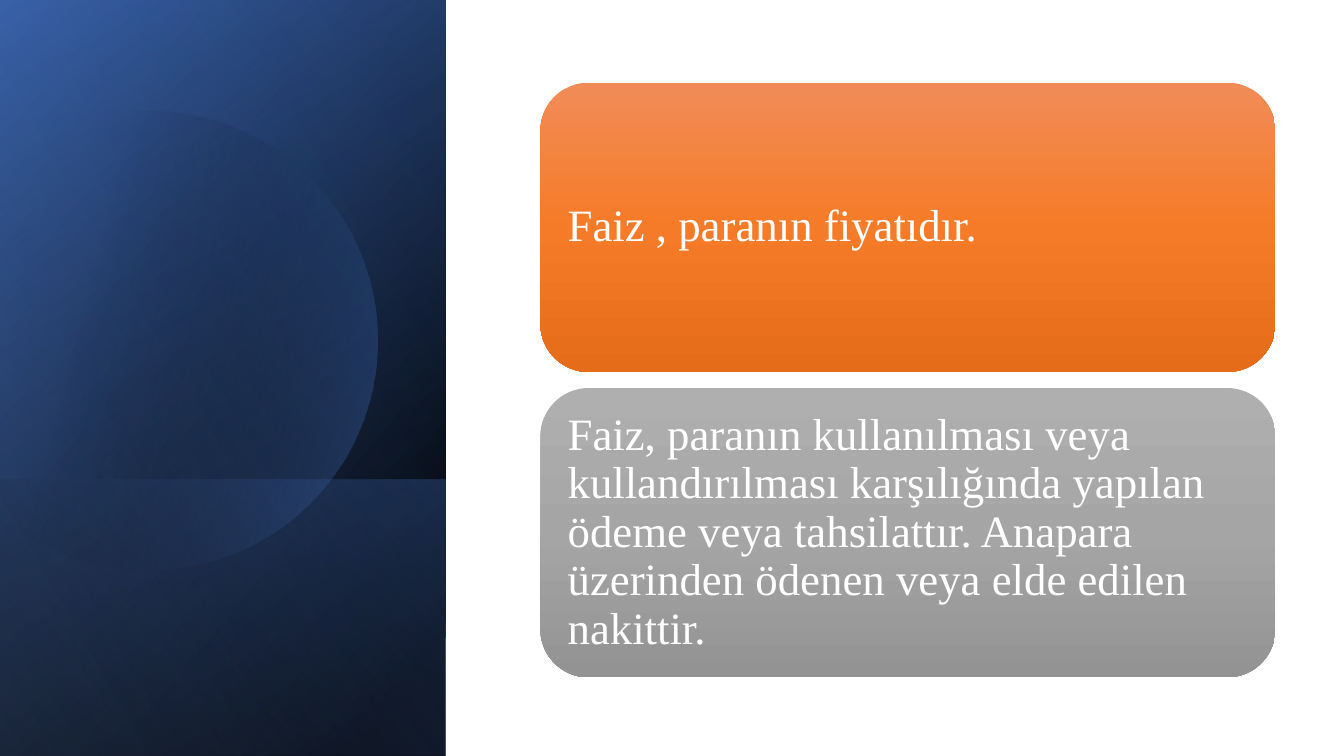
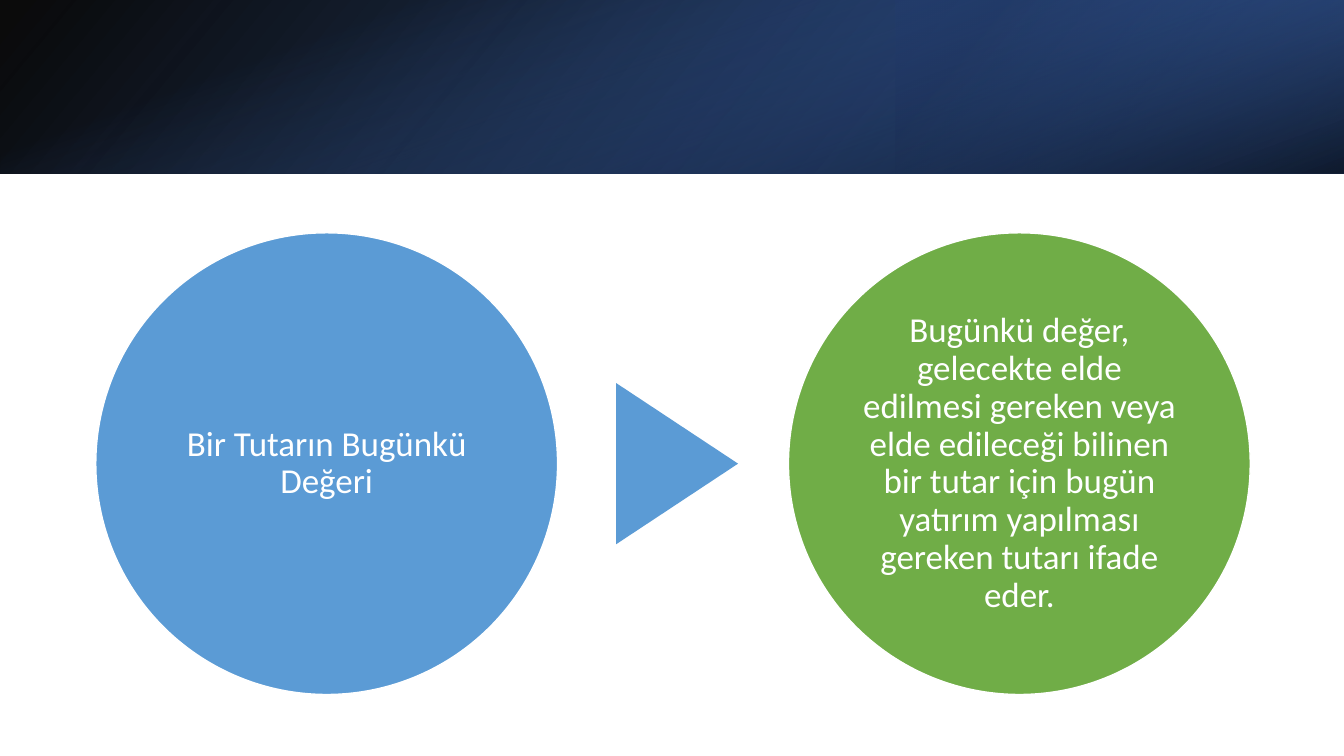
import math

import pptx
import pptx.dml.color
import pptx.enum.shapes
import pptx.enum.text
import pptx.oxml
import pptx.oxml.ns
import pptx.util

Inches = pptx.util.Inches
Shape = pptx.enum.shapes.MSO_SHAPE
Align = pptx.enum.text.PP_ALIGN

SLIDE_WIDTH, SLIDE_HEIGHT = 13.33, 7.5
COLORS = {
    "black": "000000",
    "white": "FFFFFF",
    "navy": "203864",
    "deep_blue": "2F5597",
    "blue": "4472C4",
    "pale_blue": "8FAADC",
    "sky": "5B9BD5",
    "green": "70AD47",
}
ORANGE_STOPS = [(0, "F18C57"), (50, "F67B28"), (100, "E56C19")]
GRAY_STOPS = [(0, "AFAFAF"), (50, "A5A5A5"), (100, "939393")]


def rgb(name):
    return pptx.dml.color.RGBColor.from_string(COLORS[name])


def fill_gradient(shape, stops, angle):
    """Stops are (position %, colour[, opacity %])."""
    stop_xml = ""
    for position, color, *opacity in stops:
        alpha = f'<a:alpha val="{opacity[0] * 1000}"/>' if opacity else ""
        stop_xml += (f'<a:gs pos="{position * 1000}"><a:srgbClr '
                     f'val="{COLORS.get(color, color)}">{alpha}</a:srgbClr></a:gs>')
    shape.fill.gradient()
    properties = shape.element.spPr
    properties.replace(
        properties.find(pptx.oxml.ns.qn("a:gradFill")),
        pptx.oxml.parse_xml(
            f'<a:gradFill {pptx.oxml.ns.nsdecls("a")} rotWithShape="1">'
            f'<a:gsLst>{stop_xml}</a:gsLst>'
            f'<a:lin ang="{angle * 60000}" scaled="0"/></a:gradFill>'))


def add_plain_shape(page, kind, box, rotation=0):
    """Place a shape so that it covers the box after its rotation."""
    left, top, width, height = box
    if rotation % 180 == 90:
        left, top = left + (width - height) / 2, top + (height - width) / 2
        width, height = height, width
    shape = page.shapes.add_shape(kind, *map(Inches, (left, top, width, height)))
    shape.rotation = rotation
    shape.shadow.inherit = False
    shape.line.fill.background()
    return shape


def add_glow(page, box, stops, angle, rotation=0, flipped=True):
    glow = add_plain_shape(page, Shape.RECTANGLE, box, rotation)
    if flipped:
        glow.element.spPr.xfrm.set("flipH", "1")
    fill_gradient(glow, stops, angle)


def write_text(shape, text, font, size, margin, alignment):
    frame = shape.text_frame
    frame.word_wrap = True
    frame.vertical_anchor = pptx.enum.text.MSO_ANCHOR.MIDDLE
    frame.margin_left = frame.margin_right = Inches(margin)
    frame.margin_top = frame.margin_bottom = Inches(margin)
    para = frame.paragraphs[0]
    para.text = text
    para.alignment = alignment
    para.line_spacing = 0.9
    para.font.name = font
    para.font.size = pptx.util.Pt(size)
    para.font.color.rgb = rgb("white")


def add_cut_disc(page, center_x, center_y, radius, cut_x):
    """A disc with its left side cut off along a vertical line."""
    limit = math.acos((cut_x - center_x) / radius)
    steps = 120
    angles = [limit * (2 * step / steps - 1) for step in range(steps + 1)]
    points = [(Inches(center_x + radius * math.cos(angle)),
               Inches(center_y + radius * math.sin(angle))) for angle in angles]
    builder = page.shapes.build_freeform(*points[0])
    builder.add_line_segments(points[1:], close=True)
    disc = builder.convert_to_shape()
    disc.shadow.inherit = False
    disc.line.fill.background()
    fill_gradient(disc, [(29, "black", 0), (100, "blue", 43)], 14)


def add_side_panel(page, box):
    left, top, width, height = box
    foot_height = 2.74
    foot = (left, top + height - foot_height, width, foot_height)
    add_glow(page, box, [(8, "black"), (100, "deep_blue")], 50, 90)
    add_glow(page, box, [(0, "black", 0), (99, "blue", 46)], 30, 90)
    add_glow(page, foot, [(2, "blue", 29), (100, "black", 30)], 130, 90)
    add_cut_disc(page, left + 1.46, top + 3.38, 2.28, left - 0.15)
    add_glow(page, box, [(0, "black", 0), (99, "pale_blue", 11)], 120, 90)


def add_top_band(page, box):
    left, top, width, height = box
    right_third = (left + width * 2 / 3, top, width / 3, height)
    add_glow(page, box, [(0, "black", 96), (100, "deep_blue")], 140)
    add_glow(page, right_third, [(19, "navy", 68), (100, "blue", 79)], 320, 180)
    add_glow(page, box, [(23, "blue", 0), (99, "black", 74)], 340, 90, flipped=False)


def add_card_stack(page, box, cards, gap=0.16):
    left, top, width, height = box
    card_height = (height - gap * (len(cards) - 1)) / len(cards)
    for index, (text, stops) in enumerate(cards):
        card_top = top + index * (card_height + gap)
        card = add_plain_shape(page, Shape.ROUNDED_RECTANGLE,
                               (left, card_top, width, card_height))
        fill_gradient(card, stops, 90)
        write_text(card, text, "Times New Roman", 32, 0.13, Align.LEFT)


def add_circle_flow(page, box, circles):
    """Circles as tall as the box, with an arrowhead in each gap."""
    left, top, width, diameter = box
    pitch = (width - diameter) / (len(circles) - 1)
    head_width, head_height = 1.21, 1.6
    for index, (text, color) in enumerate(circles):
        circle_left = left + index * pitch
        if index:
            head = add_plain_shape(
                page, Shape.ISOSCELES_TRIANGLE,
                (circle_left - pitch + diameter + 0.58,
                 top + (diameter - head_height) / 2, head_width, head_height), 90)
            head.fill.solid()
            head.fill.fore_color.rgb = rgb("sky")
        circle = add_plain_shape(page, Shape.OVAL,
                                 (circle_left, top, diameter, diameter))
        circle.fill.solid()
        circle.fill.fore_color.rgb = rgb(color)
        circle.line.color.rgb = rgb("white")
        circle.line.width = pptx.util.Pt(1)
        write_text(circle, text, "Calibri", 25, 0.03, Align.CENTER)


def main():
    deck = pptx.Presentation()
    deck.slide_width, deck.slide_height = Inches(SLIDE_WIDTH), Inches(SLIDE_HEIGHT)
    blank = deck.slide_layouts[6]

    # What interest is
    page = deck.slides.add_slide(blank)
    add_side_panel(page, (0, 0, 4.42, SLIDE_HEIGHT))
    add_card_stack(page, (5.36, 0.82, 7.29, 5.9), [
        ("Faiz , paranın fiyatıdır.", ORANGE_STOPS),
        ("Faiz, paranın kullanılması veya kullandırılması karşılığında yapılan "
         "ödeme veya tahsilattır. Anapara üzerinden ödenen veya elde edilen "
         "nakittir.", GRAY_STOPS),
    ])

    # Present value of an amount
    page = deck.slides.add_slide(blank)
    add_top_band(page, (0, 0, SLIDE_WIDTH, 1.72))
    add_circle_flow(page, (0.95, 2.31, 11.45, 4.58), [
        ("Bir Tutarın Bugünkü Değeri", "sky"),
        ("Bugünkü değer, gelecekte elde edilmesi gereken veya elde edileceği "
         "bilinen bir tutar için bugün yatırım yapılması gereken tutarı ifade "
         "eder.", "green"),
    ])

    deck.save("out.pptx")


if __name__ == "__main__":
    main()
